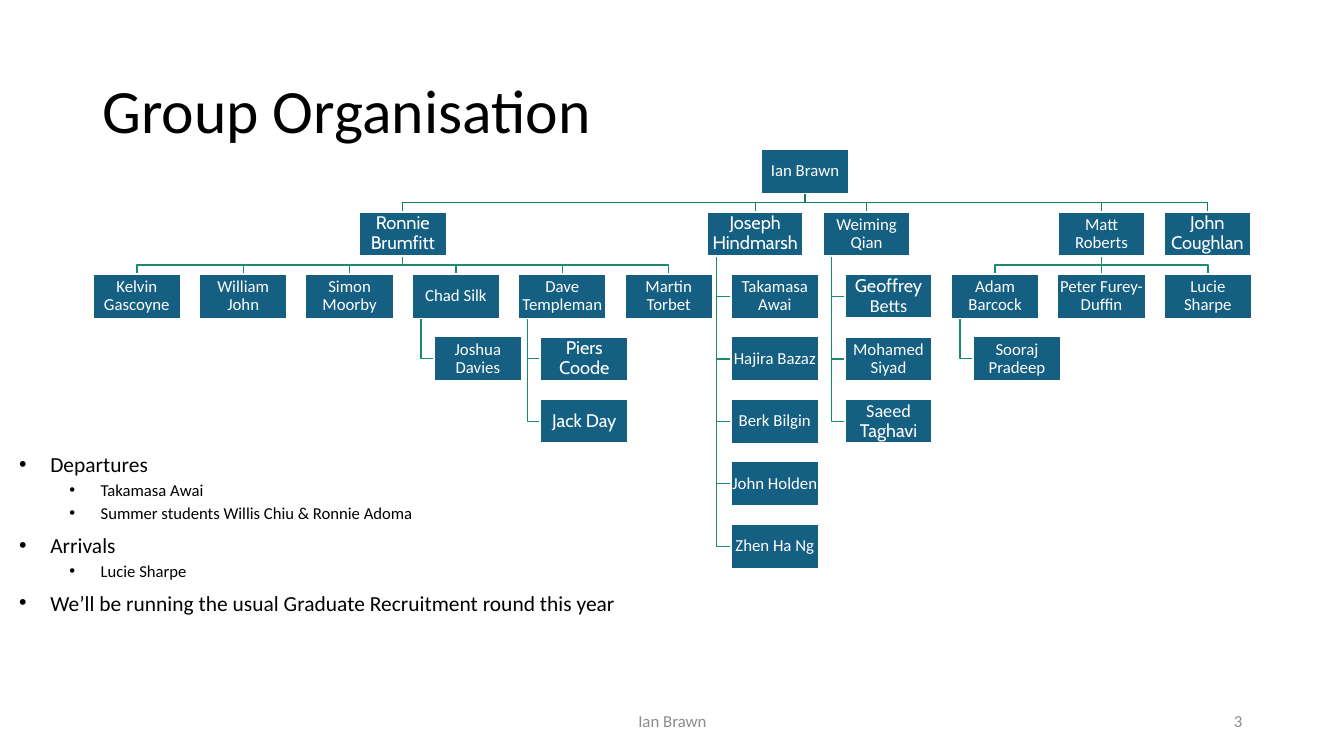
import dataclasses
import typing

import pptx
import pptx.dml.color
import pptx.enum.shapes
import pptx.enum.text
import pptx.oxml
import pptx.oxml.ns
import pptx.util
from pptx.util import Inches

ALIGN = pptx.enum.text.PP_ALIGN
ANCHOR = pptx.enum.text.MSO_ANCHOR


@dataclasses.dataclass(frozen=True)
class Theme:
    box: str = "156082"
    white: str = "FFFFFF"
    black: str = "000000"
    grey: str = "8C8C8C"
    trunk: str = "177B60"
    branch: str = "1A8C6D"
    font: str = "Calibri"
    accent: str = "Cabin"
    title: float = 44
    name: float = 12
    large: float = 13
    foot: float = 12
    item: float = 15.3
    detail: float = 11.9
    line: float = 1
    edge: float = 1.5


THEME = Theme()
WIDTH, HEIGHT = 0.87, 0.44
TOP, ROW, STEP = 1.48, 0.62, 1.055


@dataclasses.dataclass(frozen=True)
class Run:
    text: str
    size: float = THEME.name
    font: str = THEME.font
    color: str = THEME.white


@dataclasses.dataclass(frozen=True)
class Node:
    runs: tuple[Run, ...]
    kids: tuple["Node", ...] = ()
    left: typing.Optional[float] = None
    hang: bool = False
    edge: float = THEME.line
    width: float = WIDTH


@dataclasses.dataclass(frozen=True)
class Place:
    node: Node
    left: float
    top: float

    @property
    def mid(self) -> float:
        return self.left + self.node.width / 2

    @property
    def base(self) -> float:
        return self.top + HEIGHT


@dataclasses.dataclass(frozen=True)
class Link:
    color: str
    points: tuple[tuple[float, float], ...]


@dataclasses.dataclass(frozen=True)
class Item:
    text: str
    level: int = 0


@dataclasses.dataclass(frozen=True)
class Label:
    run: Run
    area: tuple[float, float, float, float]
    align: ALIGN
    spacing: float = 1.0


def plain(name: str, *kids: Node, **options: typing.Any) -> Node:
    return Node((Run(name),), kids, **options)


def large(name: str, *kids: Node, **options: typing.Any) -> Node:
    """A person set in the accent font with a heavier border."""
    run = Run(name, THEME.large, THEME.accent)
    return Node((run,), kids, edge=THEME.edge, **options)


CHART = plain(
    "Ian Brawn",
    large(
        "Ronnie Brumfitt",
        plain("Kelvin Gascoyne"),
        plain("William John"),
        plain("Simon Moorby"),
        plain("Chad Silk", plain("Joshua Davies"), hang=True),
        plain("Dave Templeman", large("Piers Coode"), large("Jack Day"), hang=True),
        plain("Martin Torbet"),
        left=3.56),
    large(
        "Joseph Hindmarsh",
        plain("Takamasa Awai"),
        plain("Hajira Bazaz"),
        plain("Berk Bilgin"),
        plain("John Holden"),
        plain("Zhen Ha Ng"),
        left=7.01, hang=True, width=0.96),
    plain(
        "Weiming Qian",
        Node((Run("Geoffrey", THEME.large, THEME.accent), Run(" Betts", THEME.large)),
             edge=THEME.edge),
        plain("Mohamed Siyad", edge=THEME.edge),
        Node((Run("Saeed ", THEME.large), Run("Taghavi", THEME.large, THEME.accent)),
             edge=THEME.edge),
        left=8.16, hang=True, edge=THEME.edge),
    plain(
        "Matt Roberts",
        plain("Adam Barcock", plain("Sooraj Pradeep"), hang=True),
        plain("Peter Furey-Duffin"),
        plain("Lucie Sharpe"),
        left=10.49, edge=THEME.edge),
    large("John Coughlan", left=11.54),
    left=7.55)

NEWS = [
    Item("Departures"),
    Item("Takamasa Awai", 1),
    Item("Summer students Willis Chiu & Ronnie Adoma", 1),
    Item("Arrivals"),
    Item("Lucie Sharpe", 1),
    Item("We’ll be running the usual Graduate Recruitment round this year"),
]

LABELS = [
    Label(Run("Group Organisation", THEME.title, color=THEME.black),
          (0.92, 0.4, 11.5, 1.45), ALIGN.LEFT, 0.9),
    Label(Run("Ian Brawn", THEME.foot, color=THEME.grey),
          (4.42, 6.95, 4.5, 0.4), ALIGN.CENTER),
    Label(Run("3", THEME.foot, color=THEME.grey),
          (9.42, 6.95, 3, 0.4), ALIGN.RIGHT),
]


def rgb(code: str) -> pptx.dml.color.RGBColor:
    return pptx.dml.color.RGBColor.from_string(code)


def layout(place: Place, places: list[Place], links: list[Link]) -> None:
    """Place everyone below a person, hanging in a column or spread in a row."""
    places.append(place)
    node = place.node
    color = THEME.trunk if node is CHART else THEME.branch
    for index, kid in enumerate(node.kids):
        if node.hang:
            spot = Place(kid, place.left + node.width / 4, place.top + ROW * (index + 1))
            spine, level = place.left + node.width / 10, spot.top + HEIGHT / 2
            points = ((spine, place.base), (spine, level), (spot.left, level))
        else:
            shift = STEP * (index - (len(node.kids) - 1) / 2)
            left = place.left + shift if kid.left is None else kid.left
            spot = Place(kid, left, place.top + ROW)
            level = (place.base + spot.top) / 2
            points = ((place.mid, place.base), (place.mid, level),
                      (spot.mid, level), (spot.mid, spot.top))
        links.append(Link(color, points))
        layout(spot, places, links)


def add_run(para: typing.Any, run: Run) -> None:
    part = para.add_run()
    part.text = run.text
    part.font.size = pptx.util.Pt(run.size)
    part.font.name = run.font
    part.font.color.rgb = rgb(run.color)


def draw_link(slide: typing.Any, link: Link) -> None:
    start, *rest = [(Inches(x), Inches(y)) for x, y in link.points]
    builder = slide.shapes.build_freeform(*start)
    builder.add_line_segments(rest, close=False)
    shape = builder.convert_to_shape()
    shape.shadow.inherit = False
    shape.fill.background()
    shape.line.color.rgb = rgb(link.color)
    shape.line.width = pptx.util.Pt(THEME.line)


def draw_box(slide: typing.Any, place: Place) -> None:
    node = place.node
    area = map(Inches, (place.left, place.top, node.width, HEIGHT))
    shape = slide.shapes.add_shape(pptx.enum.shapes.MSO_SHAPE.RECTANGLE, *area)
    shape.shadow.inherit = False
    shape.fill.solid()
    shape.fill.fore_color.rgb = rgb(THEME.box)
    shape.line.color.rgb = rgb(THEME.white)
    shape.line.width = pptx.util.Pt(node.edge)
    frame = shape.text_frame
    frame.word_wrap = True
    frame.vertical_anchor = ANCHOR.MIDDLE
    frame.margin_left = frame.margin_right = Inches(0.01)
    frame.margin_top = frame.margin_bottom = Inches(0.01)
    para = frame.paragraphs[0]
    para.alignment = ALIGN.CENTER
    para.line_spacing = 0.9
    for run in node.runs:
        add_run(para, run)


def draw_label(slide: typing.Any, label: Label) -> None:
    frame = slide.shapes.add_textbox(*map(Inches, label.area)).text_frame
    frame.word_wrap = True
    frame.vertical_anchor = ANCHOR.MIDDLE
    para = frame.paragraphs[0]
    para.alignment = label.align
    para.line_spacing = label.spacing
    add_run(para, label.run)


def draw_news(slide: typing.Any) -> None:
    area = map(Inches, (0, 4.48, 6.61, 1.73))
    frame = slide.shapes.add_textbox(*area).text_frame
    frame.word_wrap = True
    for index, item in enumerate(NEWS):
        para = frame.add_paragraph() if index else frame.paragraphs[0]
        para.level = item.level
        props = para._p.get_or_add_pPr()
        props.set("marL", str(Inches(0.4 + 0.5 * item.level)))
        props.set("indent", str(Inches(-0.31)))
        space = pptx.oxml.ns.nsdecls("a")
        for tag in ('buFont {} typeface="Arial"', 'buChar {} char="•"'):
            props.append(pptx.oxml.parse_xml(f"<a:{tag.format(space)}/>"))
        para.line_spacing = 0.8
        if index:
            para.space_before = pptx.util.Pt(5 if item.level else 10)
        size = THEME.detail if item.level else THEME.item
        add_run(para, Run(item.text, size, color=THEME.black))


def main() -> None:
    deck = pptx.Presentation()
    deck.slide_width, deck.slide_height = Inches(13.33), Inches(7.5)
    slide = deck.slides.add_slide(deck.slide_layouts[6])
    places: list[Place] = []
    links: list[Link] = []
    layout(Place(CHART, CHART.left, TOP), places, links)
    for link in links:
        draw_link(slide, link)
    for place in places:
        draw_box(slide, place)
    for label in LABELS:
        draw_label(slide, label)
    draw_news(slide)
    deck.save("out.pptx")


if __name__ == "__main__":
    main()
